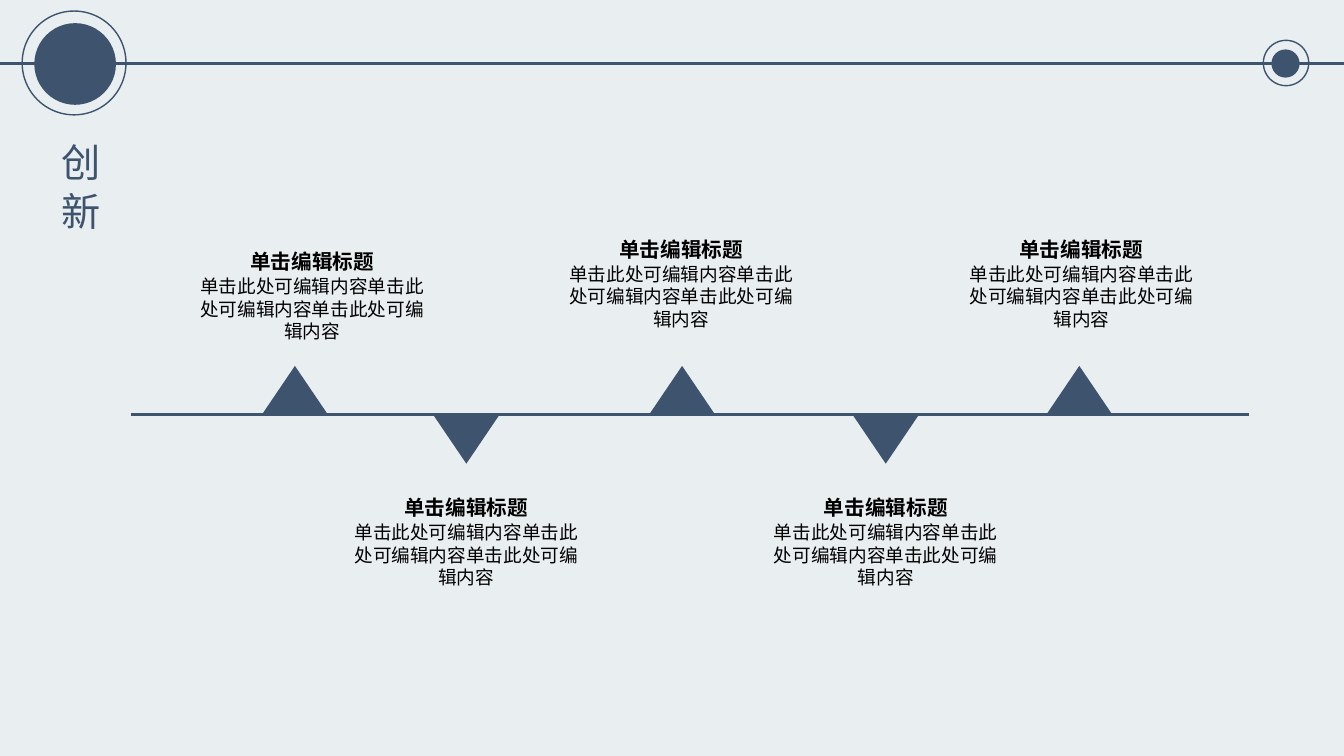
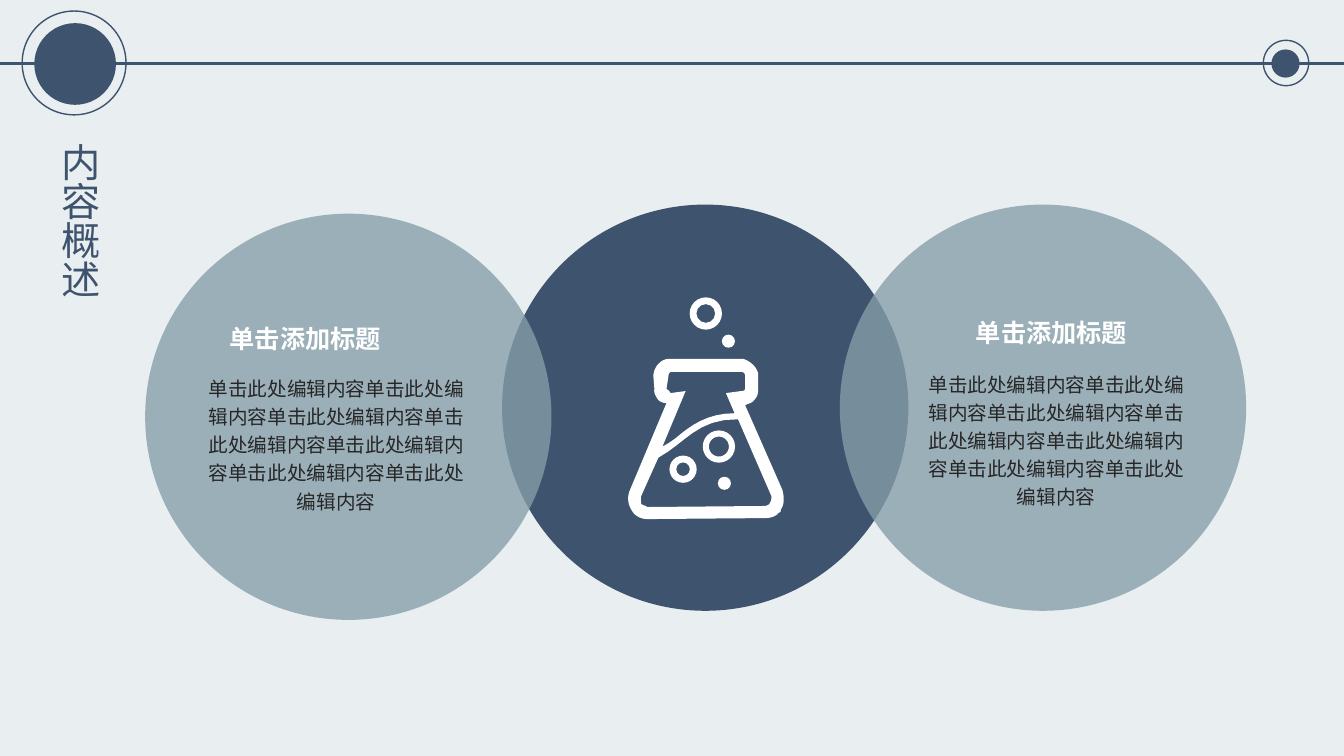
from dataclasses import dataclass

from lxml import etree
from pptx import Presentation
from pptx.dml.color import RGBColor
from pptx.enum.shapes import MSO_CONNECTOR, MSO_SHAPE
from pptx.enum.text import PP_ALIGN
from pptx.oxml.ns import qn
from pptx.util import Emu, Pt

OVAL, RING = MSO_SHAPE.OVAL, MSO_SHAPE.DONUT
PEAK = MSO_SHAPE.ISOSCELES_TRIANGLE
LINE = MSO_CONNECTOR.STRAIGHT
LEFT, MID = PP_ALIGN.LEFT, PP_ALIGN.CENTER

PX = 9144  # 100 px to the inch
WIDE, HIGH = 1333, 750
FONT = "Noto Sans CJK SC"
HUES = {
    "page": "E9EEF1",
    "navy": "3E536E",
    "mist": "869EAA",
    "black": "000000",
    "ink": "262626",
    "white": "FFFFFF",
}


@dataclass(frozen=True)
class Style:
    size: float
    hue: str
    bold: bool = False
    align: PP_ALIGN = MID
    space: float = 1.0
    inset: bool = True
    wrap: bool = True


@dataclass(frozen=True)
class Step:
    left: int
    top: int
    mark: int
    up: bool


@dataclass(frozen=True)
class Disc:
    left: int
    top: int
    hue: str
    alpha: int = 100


@dataclass(frozen=True)
class Note:
    head: tuple[int, int]
    body: tuple[int, int]


@dataclass(frozen=True)
class Bubble:
    left: int
    top: int
    size: int
    rim: float = 0.0


TITLE = Style(28, "navy", align=LEFT)
STEP_HEAD = Style(14.7, "black", bold=True, inset=False, wrap=False)
STEP_BODY = Style(13.3, "black", inset=False)
NOTE_HEAD = Style(18, "white", bold=True, align=LEFT)
NOTE_BODY = Style(14, "ink", space=1.2)

STEPS = [
    Step(195, 247, 260, True),
    Step(348, 491, 430, False),
    Step(561, 235, 644, True),
    Step(764, 491, 846, False),
    Step(958, 235, 1038, True),
]
DISCS = [
    Disc(498, 203, "navy"),
    Disc(833, 203, "mist", 78),
    Disc(144, 212, "mist", 78),
]
NOTES = [Note((218, 316), (189, 364)), Note((958, 310), (903, 360))]
BUBBLES = [
    Bubble(697, 427, 32, 0.19),
    Bubble(684, 295, 32, 0.21),
    Bubble(664, 452, 27, 0.25),
    Bubble(712, 473, 13),
    Bubble(716, 332, 13),
]

# Each outline is a start point, then lines (2 numbers) or curves (6 numbers)
GLASS = [
    (665, 356), (660, 356, 657, 357, 653, 361), (651, 363, 648, 368, 648, 373),
    (649, 386), (648, 390, 651, 394, 653, 397), (655, 399, 659, 400, 661, 400),
    (624, 488), (622, 495, 623, 501, 627, 507), (629, 511, 635, 515, 642, 515),
    (758, 514), (763, 514, 769, 513, 772, 509), (774, 508, 775, 507, 774, 506),
    (778, 501, 778, 494, 776, 486), (739, 402),
    (743, 400, 745, 400, 747, 398), (751, 394, 752, 391, 752, 386),
    (752, 372), (752, 369, 750, 365, 747, 362), (744, 359, 740, 357, 737, 356),
]
FLUID = [
    (765, 492), (765, 495, 765, 497, 764, 498), (763, 500),
    (762, 501, 760, 502, 758, 502), (642, 503),
    (641, 502, 637, 501, 636, 500), (636, 497, 635, 496, 636, 492),
    (653, 454), (679, 440, 692, 415, 732, 416),
]
NECK = [
    (739, 373), (739, 385), (739, 387, 738, 388, 735, 388), (720, 390),
    (729, 411), (728, 410), (702, 410, 685, 422, 671, 434),
    (667, 437, 663, 440, 657, 443), (680, 388), (665, 390),
    (664, 388, 663, 387, 661, 386), (663, 373),
    (663, 371, 664, 369, 666, 369), (735, 369), (738, 369, 739, 371, 739, 373),
]


def px(num: float) -> Emu:
    return Emu(round(num * PX))


def color(name: str) -> RGBColor:
    return RGBColor.from_string(HUES[name])


def paint(shape, hue: str, alpha: int = 100) -> None:
    shape.shadow.inherit = False
    shape.line.fill.background()
    shape.fill.solid()
    shape.fill.fore_color.rgb = color(hue)
    if alpha < 100:
        tone = shape.fill._xPr.find(".//" + qn("a:srgbClr"))
        etree.SubElement(tone, qn("a:alpha")).set("val", str(alpha * 1000))


def add_form(slide, kind, left: int, top: int, wide: int, high: int, hue: str, alpha: int = 100):
    shape = slide.shapes.add_shape(kind, px(left), px(top), px(wide), px(high))
    paint(shape, hue, alpha)
    return shape


def add_halo(slide, left: int, top: int, size: int) -> None:
    halo = add_form(slide, OVAL, left, top, size, size, "navy")
    halo.fill.background()
    halo.line.color.rgb = color("navy")
    halo.line.width = Pt(1)


def add_rule(slide, start: int, end: int, top: int) -> None:
    rule = slide.shapes.add_connector(LINE, px(start), px(top), px(end), px(top))
    rule.line.color.rgb = color("navy")
    rule.line.width = Pt(2)
    etree.SubElement(rule._element.spPr, qn("a:effectLst"))


def add_text(slide, text: str, left: int, top: int, wide: int, high: int, style: Style):
    box = slide.shapes.add_textbox(px(left), px(top), px(wide), px(high))
    frame = box.text_frame
    frame.word_wrap = style.wrap
    if not style.inset:
        frame.margin_left = frame.margin_right = 0
        frame.margin_top = frame.margin_bottom = 0
    frame.text = text
    para = frame.paragraphs[0]
    para.alignment = style.align
    para.line_spacing = style.space
    for run in para.runs:
        font = run.font
        font.size, font.bold, font.name = Pt(style.size), style.bold, FONT
        font.color.rgb = color(style.hue)
        etree.SubElement(font._element, qn("a:ea")).set("typeface", FONT)
    return box


def trace(outline: list[tuple[int, ...]], cuts: int = 8) -> list[tuple[int, int]]:
    """Turn an outline into points, cutting each curve into short lines."""
    dots = [outline[0]]
    for part in outline[1:]:
        if len(part) == 2:
            dots.append(part)
            continue
        base = dots[-1]
        for cut in range(1, cuts + 1):
            t = cut / cuts
            u = 1 - t
            dots.append(tuple(
                u**3 * base[i] + 3 * u * u * t * part[i]
                + 3 * u * t * t * part[i + 2] + t**3 * part[i + 4]
                for i in (0, 1)
            ))
    return [(px(x), px(y)) for x, y in dots]


def add_flask(slide) -> None:
    first, *rest = trace(GLASS)
    pen = slide.shapes.build_freeform(*first)
    pen.add_line_segments(rest)
    for hole in (FLUID, NECK):
        first, *rest = trace(hole)
        pen.move_to(*first)
        pen.add_line_segments(rest)
    paint(pen.convert_to_shape(), "white")
    for item in BUBBLES:
        kind = RING if item.rim else OVAL
        form = add_form(slide, kind, item.left, item.top, item.size, item.size, "white")
        if item.rim:
            form.adjustments[0] = item.rim


def add_frame(slide, title: str) -> None:
    """Draw the top rule, its circles and the upright title."""
    add_rule(slide, 0, WIDE, 63)
    add_form(slide, OVAL, 34, 23, 81, 81, "navy")
    add_halo(slide, 22, 11, 103)
    add_form(slide, OVAL, 1261, 49, 28, 28, "navy")
    add_halo(slide, 1253, 40, 45)
    box = add_text(slide, title, 40, 132, 67, 216, TITLE)
    box.text_frame._txBody.bodyPr.set("vert", "eaVert")


def draw_steps(slide) -> None:
    add_frame(slide, "创 新")
    add_rule(slide, 130, 1239, 411)
    for step in STEPS:
        add_text(slide, "单击编辑标题", step.left + 53, step.top, 123, 25, STEP_HEAD)
        add_text(slide, "单击此处可编辑内容" * 3, step.left, step.top + 26, 229, 67, STEP_BODY)
        peak = add_form(slide, PEAK, step.mark, 363 if step.up else 412, 65, 48, "navy")
        peak.rotation = 0 if step.up else 180


def draw_discs(slide) -> None:
    for disc in DISCS:
        add_form(slide, OVAL, disc.left, disc.top, 403, 403, disc.hue, disc.alpha)
    for note in NOTES:
        add_text(slide, "单击添加标题", *note.head, 182, 40, NOTE_HEAD)
        add_text(slide, "单击此处编辑内容" * 7, *note.body, 289, 151, NOTE_BODY)
    add_flask(slide)
    add_frame(slide, "内容概述")


def main() -> None:
    deck = Presentation()
    deck.slide_width, deck.slide_height = px(WIDE), px(HIGH)
    back = deck.slide_master.background.fill
    back.solid()
    back.fore_color.rgb = color("page")
    blank = deck.slide_layouts[6]
    for draw in (draw_steps, draw_discs):
        draw(deck.slides.add_slide(blank))
    deck.save("out.pptx")


if __name__ == "__main__":
    main()
